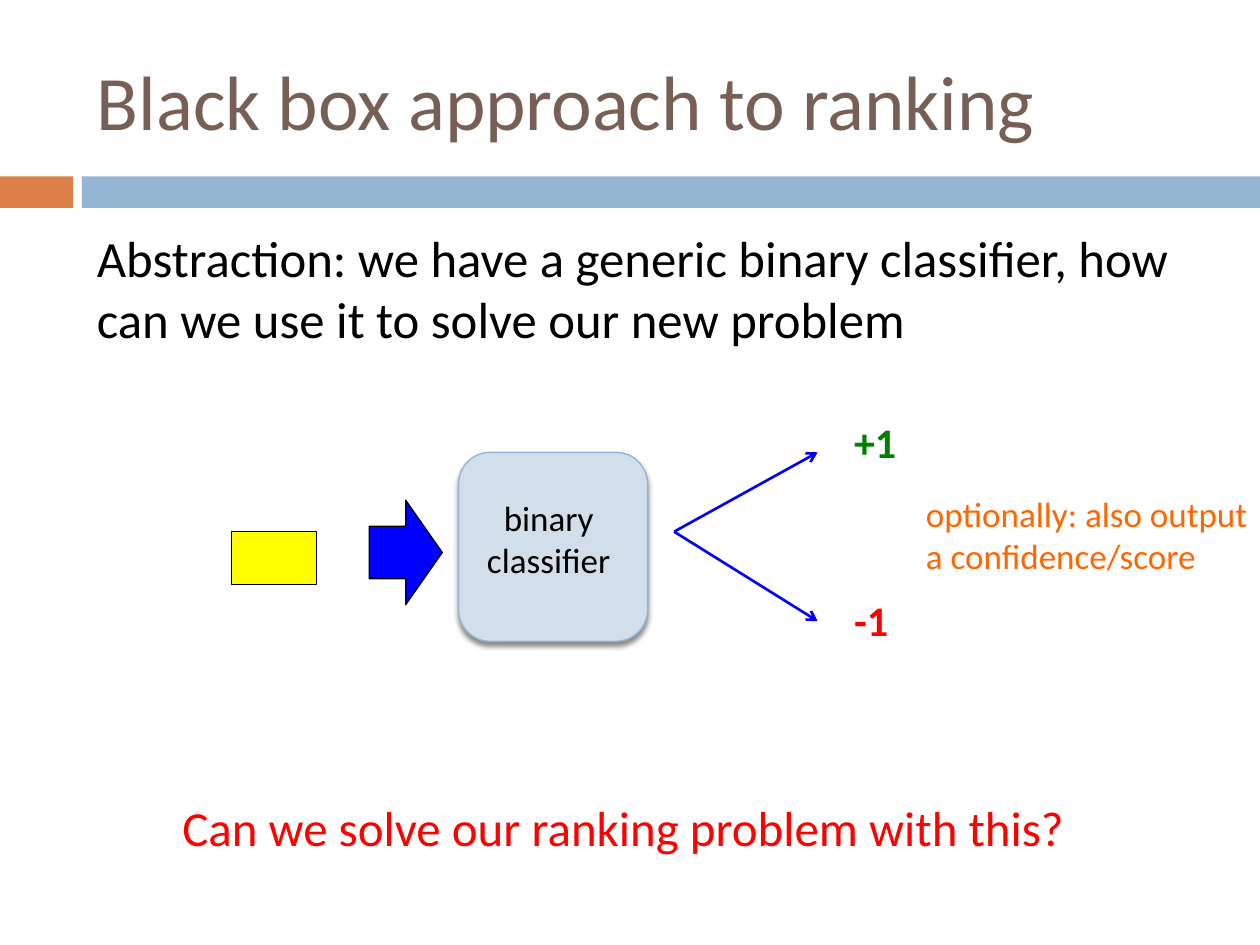
from dataclasses import dataclass
from lxml import etree
from pptx import Presentation
from pptx.dml.color import RGBColor
from pptx.enum.shapes import MSO_CONNECTOR as CONN, MSO_SHAPE as SHAPE
from pptx.enum.text import MSO_ANCHOR as ANCHOR, PP_ALIGN as ALIGN
from pptx.oxml import parse_xml
from pptx.oxml.ns import nsdecls, qn
from pptx.util import Inches, Pt


@dataclass(frozen=True)
class Theme:
    font: str = "Calibri"
    title: str = "775F55"
    orange: str = "DD8047"
    sky: str = "94B6D2"
    pale: str = "D2DEEA"
    black: str = "000000"
    yellow: str = "FFFF00"
    blue: str = "0000FF"
    green: str = "008000"
    red: str = "FF0000"
    note: str = "FF6600"
    title_size: int = 44
    body_size: int = 29
    question_size: int = 28
    output_size: int = 24
    label_size: int = 20


T = Theme()

SHAPES = [
    (SHAPE.RECTANGLE, (0, 1.4, 0.58, 0.25), T.orange, None, 0),
    (SHAPE.RECTANGLE, (0.65, 1.4, 9.35, 0.25), T.sky, None, 0),
    (SHAPE.RECTANGLE, (1.84, 4.22, 0.67, 0.42), T.yellow, T.black, 0.75),
    (SHAPE.RIGHT_ARROW, (2.93, 3.97, 0.58, 0.83), T.blue, T.black, 0.75),
]
CLASSIFIER = (SHAPE.ROUNDED_RECTANGLE, (3.64, 3.59, 1.5, 1.5), T.pale, T.sky, 0.79)

TEXTS = [
    ("Black box approach to ranking", (0.67, 0.25, 8.92, 1.08),
     T.title_size, T.title, {"anchor": ANCHOR.MIDDLE}),
    ("Abstraction: we have a generic binary classifier, how can we use it "
     "to solve our new problem", (0.67, 1.75, 8.92, 1.23),
     T.body_size, T.black, {"before": 7}),
    ("binary classifier", (3.57, 3.89, 1.57, 0.77),
     T.label_size, T.black, {"align": ALIGN.CENTER}),
    ("+1", (6.68, 3.26, 0.61, 0.5), T.output_size, T.green, {"bold": True, "wrap": False}),
    ("-1", (6.68, 4.67, 0.49, 0.5), T.output_size, T.red, {"bold": True, "wrap": False}),
    ("optionally: also output a confidence/score", (7.25, 3.86, 2.85, 0.77),
     T.label_size, T.note, {}),
    ("Can we solve our ranking problem with this?", (1.35, 6.28, 7.34, 0.57),
     T.question_size, T.red, {}),
]

FORK = (5.35, 4.22)
OUTPUTS = [(6.49, 3.59), (6.49, 4.93)]


def color(value):
    return RGBColor.from_string(value)


def inches(values):
    return [Inches(v) for v in values]


def add_block(s, kind, box, fill, line, width):
    sp = s.shapes.add_shape(kind, *inches(box))
    sp.shadow.inherit = False
    sp.fill.solid()
    sp.fill.fore_color.rgb = color(fill)
    if line:
        sp.line.color.rgb = color(line)
        sp.line.width = Pt(width)
    else:
        sp.line.fill.background()
    return sp


def add_shadow(sp):
    effects = sp._element.spPr.find(qn("a:effectLst"))
    effects.append(parse_xml(
        f'<a:outerShdw {nsdecls("a")} blurRad="{Pt(3)}" dist="{Pt(2.4)}" '
        f'dir="5400000" rotWithShape="0"><a:srgbClr val="{T.black}">'
        '<a:alpha val="45000"/></a:srgbClr></a:outerShdw>'))


def add_text(s, text, box, size, fill, anchor=ANCHOR.TOP, align=ALIGN.LEFT,
             before=0, bold=False, wrap=True):
    tf = s.shapes.add_textbox(*inches(box)).text_frame
    tf.word_wrap = wrap
    tf.vertical_anchor = anchor
    p = tf.paragraphs[0]
    p.text = text
    p.alignment = align
    p.space_before = Pt(before)
    p.font.name = T.font
    p.font.size = Pt(size)
    p.font.bold = bold
    p.font.color.rgb = color(fill)


def add_arrow(s, start, end):
    c = s.shapes.add_connector(CONN.STRAIGHT, *inches(start + end))
    c.line.color.rgb = color(T.blue)
    c.line.width = Pt(1.5)
    etree.SubElement(c.line._get_or_add_ln(), qn("a:tailEnd"), type="arrow")
    etree.SubElement(c._element.spPr, qn("a:effectLst"))


def main():
    prs = Presentation()
    prs.slide_width, prs.slide_height = Inches(10), Inches(7.5)
    s = prs.slides.add_slide(prs.slide_layouts[6])
    for block in SHAPES:
        add_block(s, *block)
    add_shadow(add_block(s, *CLASSIFIER))
    for end in OUTPUTS:
        add_arrow(s, FORK, end)
    for text, box, size, fill, options in TEXTS:
        add_text(s, text, box, size, fill, **options)
    prs.save("out.pptx")


if __name__ == "__main__":
    main()
